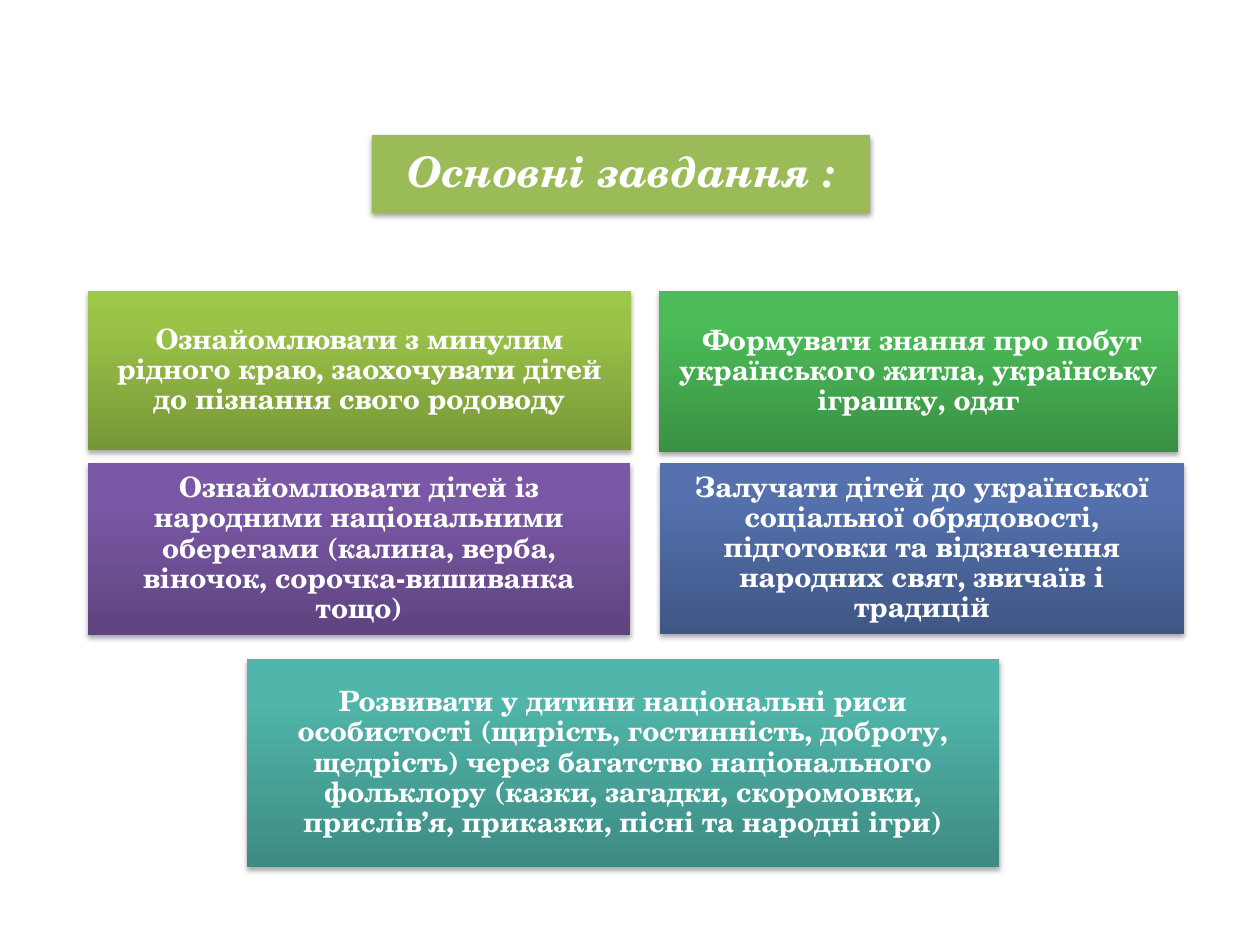
from copy import deepcopy

from lxml import etree
from pptx import Presentation, util as u
from pptx.dml.color import RGBColor
from pptx.enum import shapes, text
from pptx.oxml import ns

PX = u.Inches(1) / 126
FONT = "TeX Gyre Schola"

TITLE = ("Основні завдання :", (372, 135, 498, 78), "9BBB59")

# Wording, box (left, top, width, height), gradient from bottom to top
TASKS = [
    ("Ознайомлювати з минулим рідного краю, заохочувати дітей до пізнання "
     "свого родоводу",
     (88, 291, 543, 159), ("779737", "9BC348", "9DC746")),
    (" Формувати знання про побут українського житла, українську іграшку, одяг",
     (659, 291, 519, 161), ("3A9144", "4CBC58", "4ABF57")),
    ("Розвивати у дитини національні риси особистості (щирість, гостинність, "
     "доброту, щедрість) через багатство національного фольклору (казки, "
     "загадки, скоромовки, прислів’я, приказки, пісні та народні ігри)",
     (247, 659, 752, 208), ("3D8B83", "50B5AA", "4EB8AC")),
    ("Залучати дітей до української соціальної обрядовості, підготовки та "
     "відзначення народних свят, звичаїв і традицій",
     (660, 463, 524, 171), ("405786", "5471AE", "5271B0")),
    ("Ознайомлювати дітей із народними національними оберегами (калина, верба, "
     "віночок, сорочка-вишиванка тощо)",
     (88, 463, 542, 172), ("5F4480", "7B58A6", "7C57A8")),
]


def px(length):
    return u.Emu(round(length * PX))


def color(code):
    return RGBColor.from_string(code)


def apply(target, values):
    for name, value in values.items():
        setattr(target, name, value)


def cast_shadow(box, opacity, distance):
    """Give the box a soft shadow straight below it; distance is in points."""
    box.shadow.inherit = False
    effects = box._element.spPr.find(ns.qn("a:effectLst"))
    shadow = etree.SubElement(
        effects, ns.qn("a:outerShdw"), blurRad=str(u.Pt(3.1)),
        dist=str(u.Pt(distance)), dir="5400000", rotWithShape="0")
    black = etree.SubElement(shadow, ns.qn("a:srgbClr"), val="000000")
    etree.SubElement(black, ns.qn("a:alpha"), val=str(opacity * 1000))


def fill_gradient(box, codes):
    box.fill.gradient()
    box.fill.gradient_angle = 90
    stop_list = box._element.spPr.find(ns.qn("a:gradFill")).find(ns.qn("a:gsLst"))
    stop_list.append(deepcopy(stop_list[-1]))
    for stop, position, code in zip(box.fill.gradient_stops, (0, 0.8, 1), codes):
        stop.position = position
        stop.color.rgb = color(code)


def add_panel(page, wording, bounds, inset, font):
    """Add a borderless rectangle with centred white text."""
    box = page.shapes.add_shape(shapes.MSO_SHAPE.RECTANGLE, *map(px, bounds))
    box.line.fill.background()
    frame = box.text_frame
    apply(frame, {"word_wrap": True, "vertical_anchor": text.MSO_ANCHOR.MIDDLE})
    apply(frame, {f"margin_{side}": px(inset)
                  for side in ("left", "top", "right", "bottom")})
    para = frame.paragraphs[0]
    apply(para, {"alignment": text.PP_ALIGN.CENTER, "line_spacing": 0.9})
    span = para.add_run()
    span.text = wording
    apply(span.font, {"name": FONT, "bold": True, **font})
    span.font.color.rgb = color("FFFFFF")
    return box


def add_title(page, wording, bounds, code):
    box = add_panel(page, wording, bounds, 3, {"size": u.Pt(24), "italic": True})
    box.fill.solid()
    box.fill.fore_color.rgb = color(code)
    cast_shadow(box, 38, 1.6)


def add_task(page, wording, bounds, codes):
    box = add_panel(page, wording, bounds, 9, {"size": u.Pt(16)})
    fill_gradient(box, codes)
    cast_shadow(box, 35, 1.8)


def main():
    deck = Presentation()
    apply(deck, {"slide_width": u.Inches(10), "slide_height": u.Inches(7.5)})
    page = deck.slides.add_slide(deck.slide_layouts[6])
    for task in TASKS:
        add_task(page, *task)
    add_title(page, *TITLE)
    deck.save("out.pptx")


if __name__ == "__main__":
    main()
